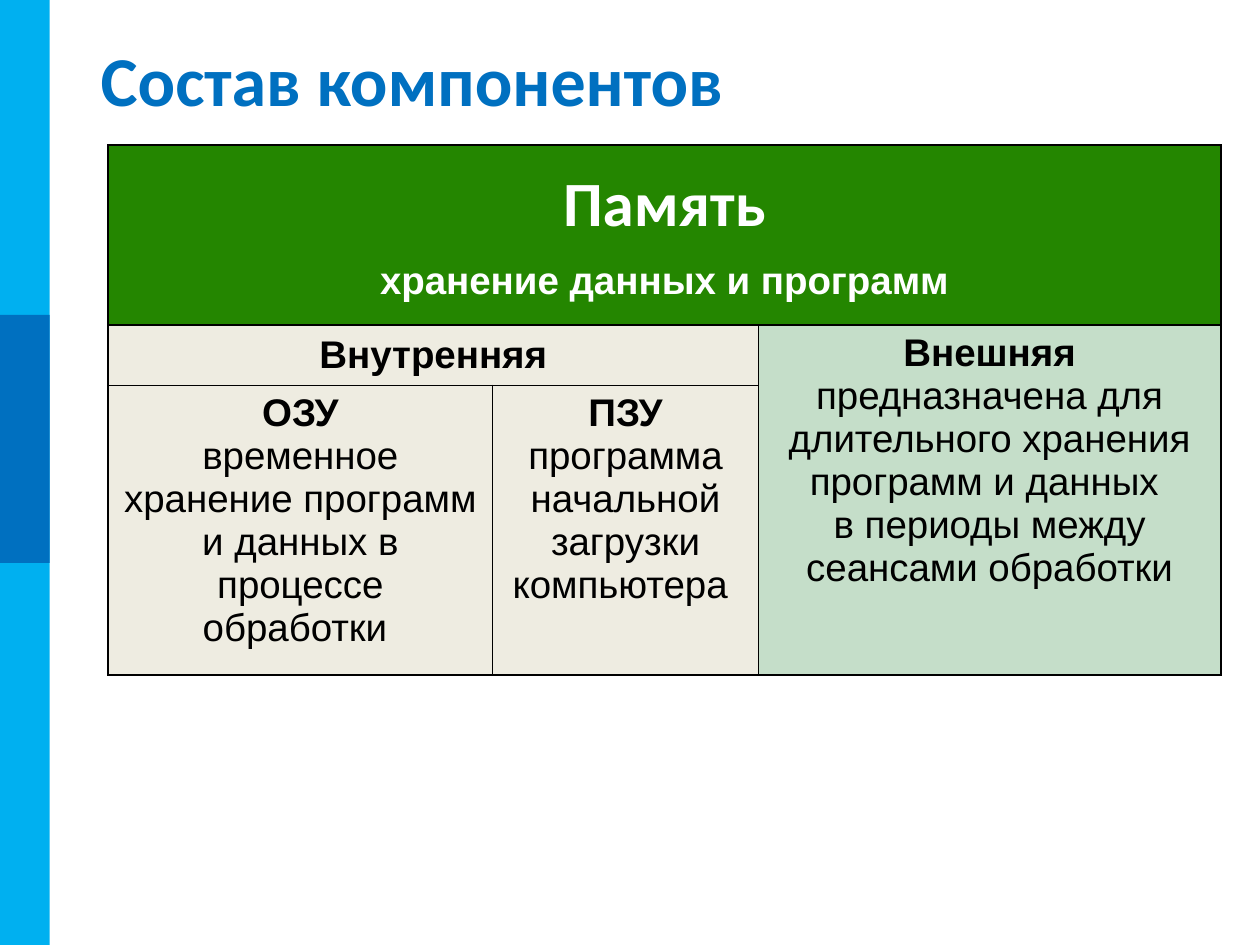
from lxml.etree import SubElement
from pptx import Presentation
from pptx.dml.color import RGBColor
from pptx.enum.shapes import MSO_SHAPE
from pptx.enum.text import MSO_ANCHOR, PP_ALIGN
from pptx.oxml.ns import qn
from pptx.util import Cm, Pt

SKY = RGBColor(0x00, 0xB0, 0xF0)
BLUE = RGBColor(0x00, 0x70, 0xC0)
GREEN = RGBColor(0x24, 0x86, 0x00)
MINT = RGBColor(0xC5, 0xDE, 0xC9)
CREAM = RGBColor(0xEE, 0xEC, 0xE1)
WHITE = RGBColor(0xFF, 0xFF, 0xFF)
BLACK = RGBColor(0x00, 0x00, 0x00)


def add_paragraph(tf, text, size=22, font="Arial", color=BLACK, bold=False,
                  align=PP_ALIGN.CENTER):
    p = tf.paragraphs[0] if not tf.text else tf.add_paragraph()
    p.text = text
    p.alignment = align
    for r in p.runs:
        r.font.size = Pt(size)
        r.font.name = font
        r.font.bold = bold
        r.font.color.rgb = color
    return p


def add_sidebar(s, x, y, w, h):
    for top, height, color in ((0, h, SKY), (h / 3, 5, BLUE)):
        sp = s.shapes.add_shape(MSO_SHAPE.RECTANGLE, Cm(x), Cm(y + top), Cm(w), Cm(height))
        sp.shadow.inherit = False
        sp.fill.solid()
        sp.fill.fore_color.rgb = color
        sp.line.fill.background()


def add_title(s, x, y, w, h, text):
    tf = s.shapes.add_textbox(Cm(x), Cm(y), Cm(w), Cm(h)).text_frame
    tf.word_wrap = True
    tf.vertical_anchor = MSO_ANCHOR.MIDDLE
    add_paragraph(tf, text, 40, "Calibri", BLUE, True, PP_ALIGN.LEFT)


def style_cell(cell, color):
    cell.fill.solid()
    cell.fill.fore_color.rgb = color
    tcPr = cell._tc.get_or_add_tcPr()
    for i, side in enumerate(("a:lnL", "a:lnR", "a:lnT", "a:lnB")):
        ln = SubElement(tcPr, qn(side), w=str(Pt(1)))
        SubElement(SubElement(ln, qn("a:solidFill")), qn("a:srgbClr"), val=str(BLACK))
        tcPr.insert(i, ln)


def add_memory_table(s, x, y, col_widths, row_heights):
    table = s.shapes.add_table(len(row_heights), len(col_widths), Cm(x), Cm(y),
                               Cm(sum(col_widths)), Cm(sum(row_heights))).table
    for col, width in zip(table.columns, col_widths):
        col.width = Cm(width)
    for row, height in zip(table.rows, row_heights):
        row.height = Cm(height)

    fills = ((GREEN, GREEN, GREEN), (CREAM, CREAM, MINT), (CREAM, CREAM, MINT))
    for i, row_fills in enumerate(fills):
        for j, color in enumerate(row_fills):
            style_cell(table.cell(i, j), color)
    for first, last in (((0, 0), (0, 2)), ((1, 0), (1, 1)), ((1, 2), (2, 2))):
        table.cell(*first).merge(table.cell(*last))

    header = table.cell(0, 0)
    header.vertical_anchor = MSO_ANCHOR.MIDDLE
    add_paragraph(header.text_frame, "Память", 36, "Calibri", WHITE, True)
    p = add_paragraph(header.text_frame, "хранение данных и программ", color=WHITE, bold=True)
    p.space_before = Pt(9)

    internal = table.cell(1, 0)
    internal.vertical_anchor = MSO_ANCHOR.MIDDLE
    add_paragraph(internal.text_frame, "Внутренняя", bold=True)

    descriptions = (
        (1, 2, "Внешняя", "предназначена для длительного хранения программ и данных \n"
                          "в периоды между сеансами обработки"),
        (2, 0, "ОЗУ", "временное хранение программ и данных в процессе обработки "),
        (2, 1, "ПЗУ", "программа начальной загрузки компьютера "),
    )
    for i, j, name, text in descriptions:
        tf = table.cell(i, j).text_frame
        add_paragraph(tf, name, bold=True)
        add_paragraph(tf, text)


def main():
    prs = Presentation()
    prs.slide_width = Cm(25.4)
    prs.slide_height = Cm(19.05)
    s = prs.slides.add_slide(prs.slide_layouts[6])
    add_sidebar(s, 0, 0, 1, 19.05)
    add_title(s, 1.78, 0.76, 22.91, 1.63, "Состав компонентов")
    add_memory_table(s, 2.18, 2.92, (7.75, 5.36, 9.32), (3.63, 1.22, 5.77))
    prs.save("out.pptx")


if __name__ == "__main__":
    main()
